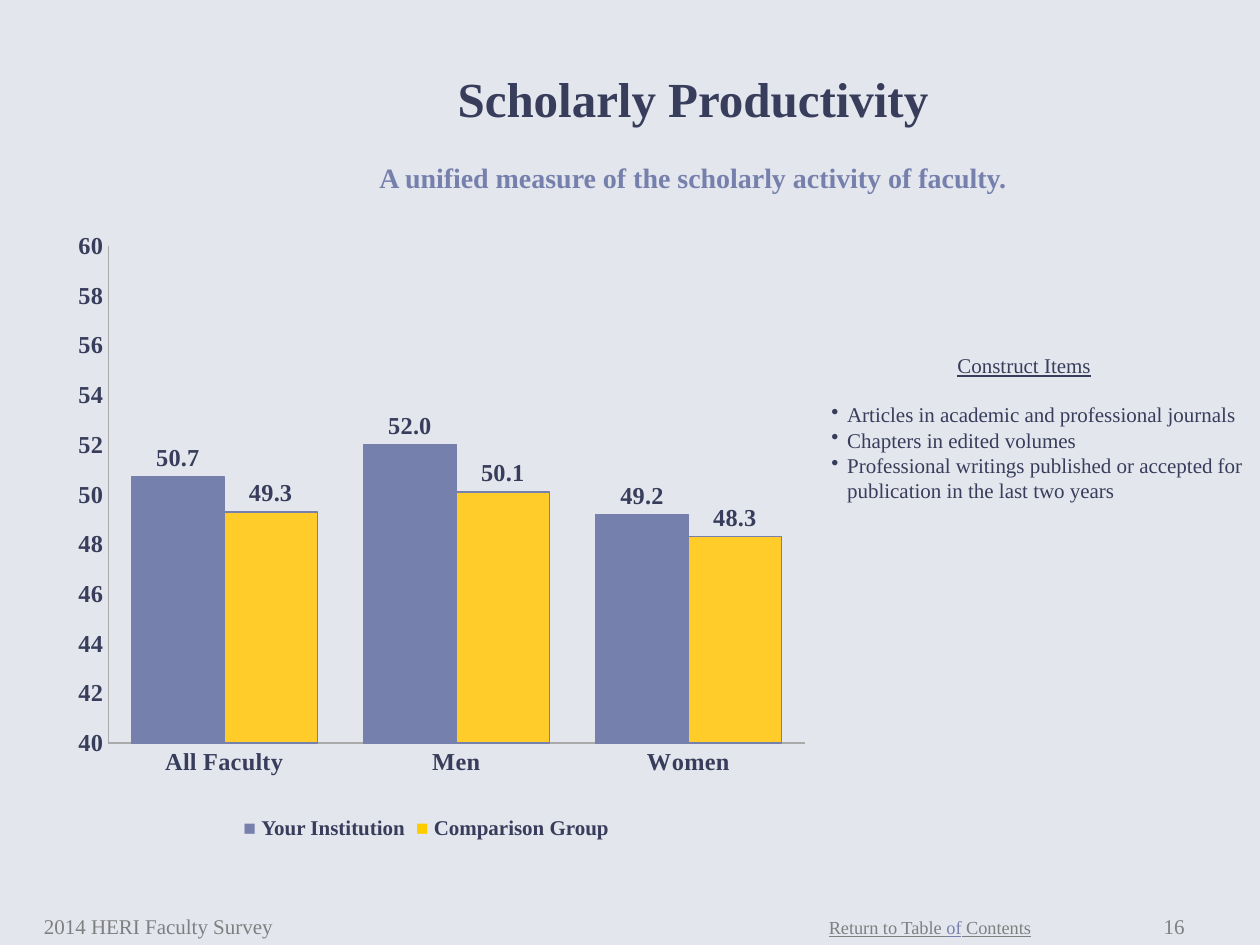
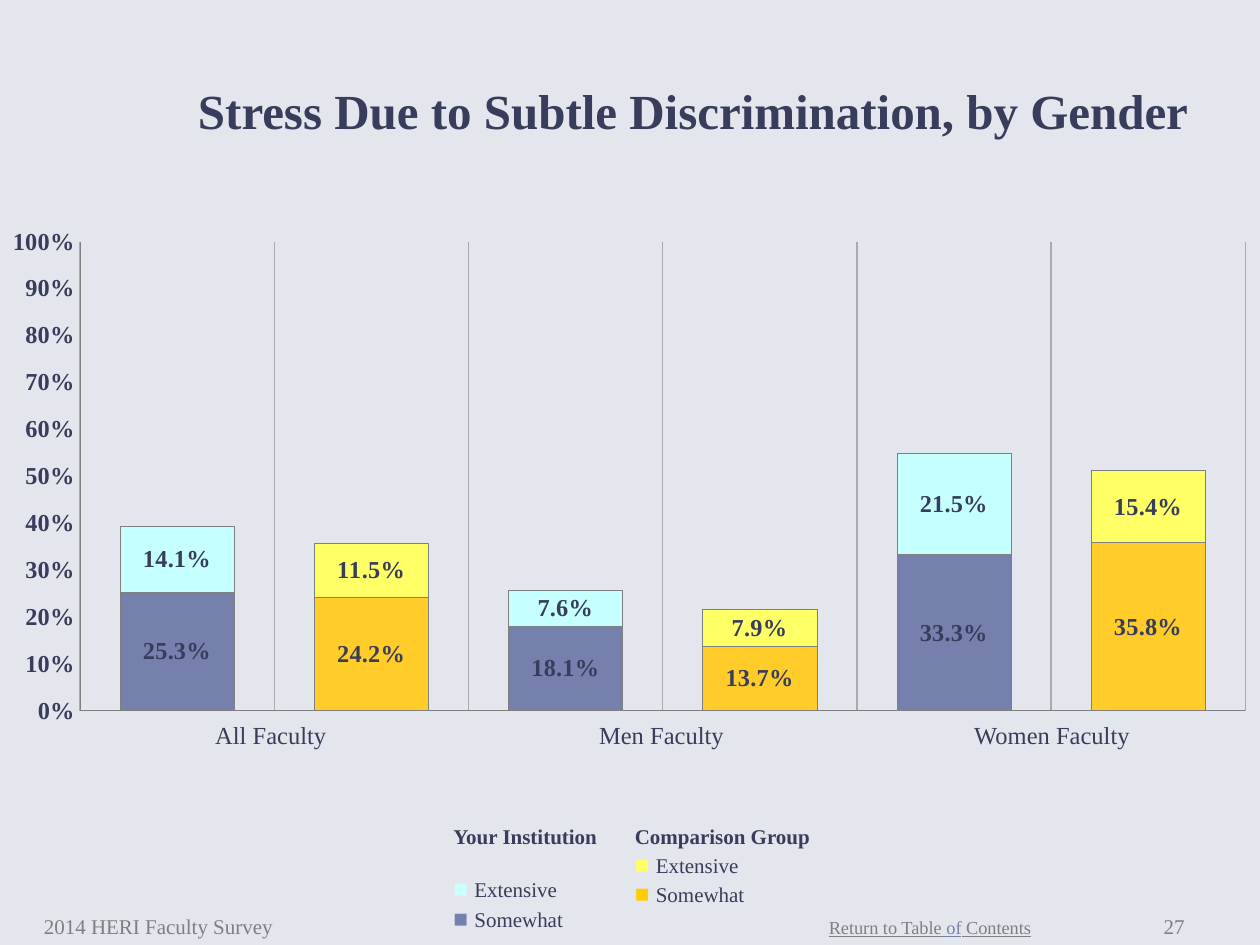
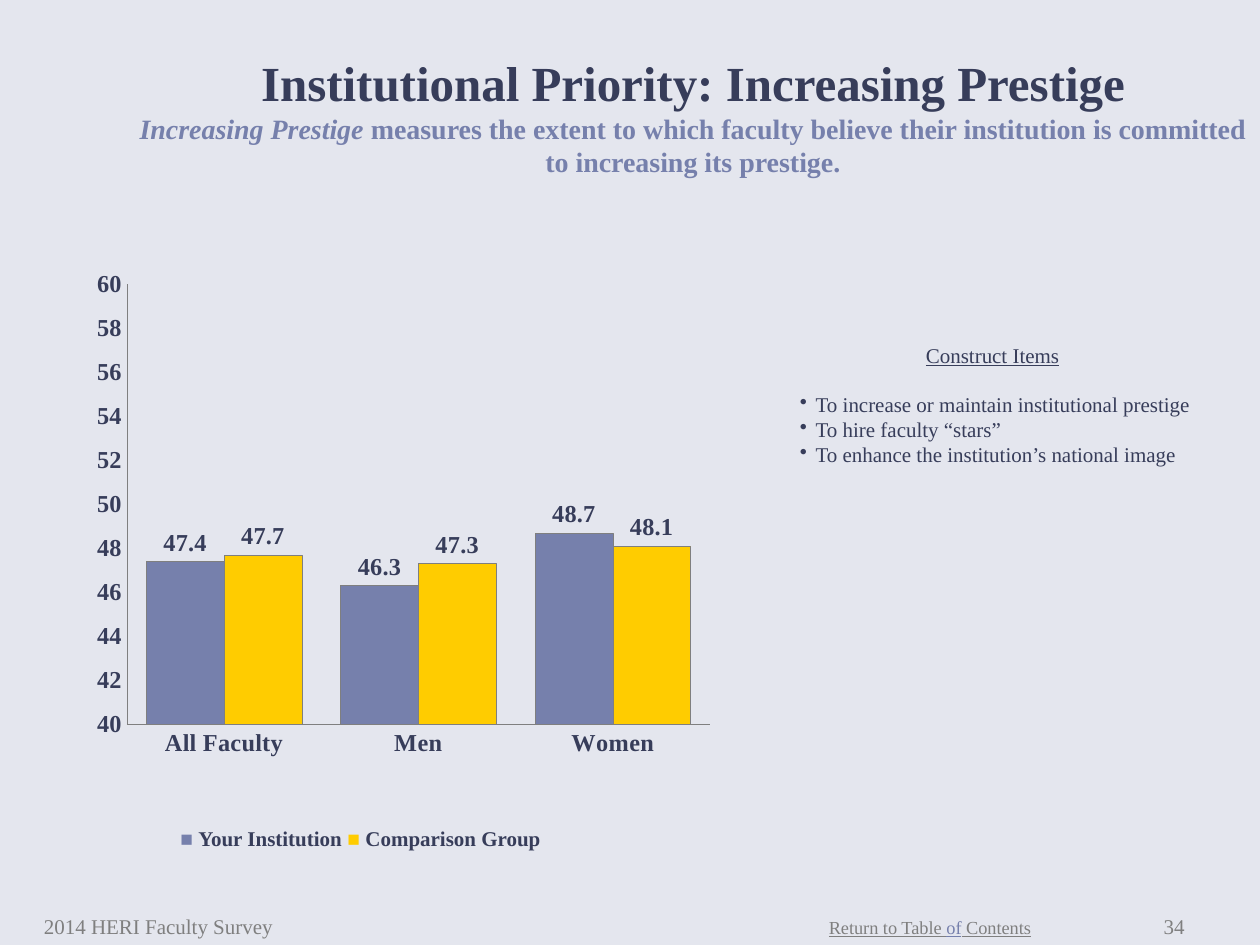
from lxml.etree import SubElement
from pptx import Presentation
from pptx.chart.data import CategoryChartData
from pptx.dml.color import RGBColor
from pptx.enum.chart import XL_CHART_TYPE as ChartType
from pptx.enum.chart import XL_LABEL_POSITION as LabelPosition
from pptx.enum.chart import XL_TICK_LABEL_POSITION as TickLabels
from pptx.enum.chart import XL_TICK_MARK as TickMark
from pptx.enum.text import MSO_ANCHOR as Anchor
from pptx.enum.text import PP_ALIGN as Align
from pptx.oxml.ns import qn
from pptx.util import Pt

BACKGROUND = RGBColor(0xE4, 0xE6, 0xEE)
NAVY = RGBColor(0x37, 0x3D, 0x5A)
BLUE = RGBColor(0x76, 0x80, 0xAC)
GRAY = RGBColor(0x7F, 0x7F, 0x7F)
LIGHT_GRAY = RGBColor(0xAA, 0xAA, 0xAA)
AMBER = RGBColor(0xFF, 0xCC, 0x29)
GOLD = RGBColor(0xFF, 0xCC, 0x00)
YELLOW = RGBColor(0xFF, 0xFF, 0x66)
AQUA = RGBColor(0xC5, 0xFF, 0xFE)
LEGEND_AQUA = RGBColor(0xCC, 0xFF, 0xFF)

FONT = "Times New Roman"
CHART_SIZE = 13.9
GROUPS = ["Your Institution", "Comparison Group"]
FACULTY = ["All Faculty", "Men", "Women"]


class Deck:
    """Holds the survey style and the slide being built."""

    def __init__(self):
        self.presentation = Presentation()
        self.presentation.slide_width = Pt(720)
        self.presentation.slide_height = Pt(540)
        fill = self.presentation.slide_master.background.fill
        fill.solid()
        fill.fore_color.rgb = BACKGROUND
        self.slide = None

    def new_slide(self, number):
        self.slide = self.presentation.slides.add_slide(self.presentation.slide_layouts[6])
        link = self.text_box(466.5, 520, 131, 20, wrap=False)
        self.paragraph(link, [("Return to Table ", {}), ("of", {"color": BLUE}), (" Contents", {})],
                       size=10.5, color=GRAY, underline=True)
        survey = self.text_box(18, 504, 228, 36, Anchor.BOTTOM)
        self.paragraph(survey, "2014 HERI Faculty Survey", color=GRAY)
        page = self.text_box(648, 504, 36, 36, Anchor.BOTTOM)
        self.paragraph(page, str(number), color=GRAY, align=Align.RIGHT)

    def text_box(self, left, top, width, height, anchor=Anchor.TOP, wrap=True):
        shape = self.slide.shapes.add_textbox(Pt(left), Pt(top), Pt(width), Pt(height))
        shape.text_frame.word_wrap = wrap
        shape.text_frame.vertical_anchor = anchor
        return shape.text_frame

    def style(self, font, color=None, size=None, **flags):
        if color is not None:
            font.color.rgb = color
        if size is not None:
            font.size = Pt(size)
        for flag, value in flags.items():
            setattr(font, flag, value)

    def paragraph(self, frame, content, size=12, color=NAVY, align=Align.LEFT, before=0,
                  margin=0, bullet=False, tab=None, **flags):
        paragraph = frame.paragraphs[0]
        if paragraph.runs:
            paragraph = frame.add_paragraph()
        properties = paragraph._p.get_or_add_pPr()
        if margin:
            properties.set("marL", str(Pt(margin)))
        if bullet:
            properties.set("indent", str(-Pt(margin)))
            SubElement(properties, qn("a:buChar"), char="•")
        if tab:
            tabs = SubElement(properties, qn("a:tabLst"))
            SubElement(tabs, qn("a:tab"), pos=str(Pt(tab)), algn="l")
        paragraph.alignment = align
        if before:
            paragraph.space_before = Pt(before)
        self.style(paragraph.font, color, size, name=FONT, **flags)
        runs = [(content, {})] if isinstance(content, str) else content
        for text, changes in runs:
            run = paragraph.add_run()
            run.text = text
            self.style(run.font, **changes)

    def title(self, text, top, height, subtitle=None, gap=0):
        frame = self.text_box(72, top, 648, height, Anchor.MIDDLE)
        self.paragraph(frame, text, size=28, align=Align.CENTER, bold=True)
        if subtitle:
            self.paragraph(frame, subtitle, size=16, color=BLUE, align=Align.CENTER,
                           before=gap, bold=True)

    def construct_items(self, left, top, width, height, items):
        frame = self.text_box(left, top, width, height)
        self.paragraph(frame, "Construct Items", margin=72, underline=True)
        for index, item in enumerate(items):
            self.paragraph(frame, item, margin=9, bullet=True, before=0 if index else 13.8)

    def group_legend(self, left, top, width, tab):
        frame = self.text_box(left, top, width, 22)
        self.paragraph(frame, [("■ ", {"color": BLUE}), (GROUPS[0] + "\t", {}),
                               ("■ ", {"color": GOLD}), (GROUPS[1], {})], tab=tab, bold=True)

    def level_legend(self, left, heading, extensive, somewhat, gap=0):
        frame = self.text_box(left, 467, 120, 71)
        self.paragraph(frame, heading, bold=True)
        for level, color, before in (("Extensive", extensive, gap), ("Somewhat", somewhat, 0)):
            self.paragraph(frame, [("■ ", {"color": color, "size": 14}), (level, {})], before=before)

    def chart(self, kind, box, plot_box, categories, series, scale, axis_format, label_format,
              gap, axis_line, outline):
        data = CategoryChartData()
        data.categories = categories
        for name, values, _ in series:
            data.add_series(name, values)
        chart = self.slide.shapes.add_chart(kind, *map(Pt, box), data).chart
        chart.has_legend = False
        chart.has_title = False
        self.style(chart.font, NAVY, CHART_SIZE, name=FONT, bold=True)
        self.place_plot(chart, plot_box)

        for axis in (chart.category_axis, chart.value_axis):
            axis.major_tick_mark = axis.minor_tick_mark = TickMark.NONE
            axis.has_major_gridlines = False
            self.line(axis.format.line, *axis_line)
        value_axis = chart.value_axis
        value_axis.minimum_scale, value_axis.maximum_scale, value_axis.major_unit = scale
        value_axis.tick_labels.number_format = axis_format
        value_axis.tick_labels.number_format_is_linked = False

        stacked = kind == ChartType.COLUMN_STACKED
        plot = chart.plots[0]
        plot.vary_by_categories = False
        plot.gap_width = gap
        plot.overlap = 100 if stacked else 0
        for column, (_, values, colors) in zip(plot.series, series):
            self.paint(column.format, colors[-1], outline)
            if len(colors) > 1:
                for index in range(len(values)):
                    self.paint(column.points[index].format, colors[index % len(colors)], outline)
            labels = column.data_labels
            labels.show_value = True
            labels.number_format = label_format
            labels.number_format_is_linked = False
            labels.position = LabelPosition.CENTER if stacked else LabelPosition.OUTSIDE_END
            self.style(labels.font, NAVY, CHART_SIZE, name=FONT, bold=True)
        return chart

    def place_plot(self, chart, plot_box):
        area = chart._chartSpace.chart.plotArea
        for layout in area.findall(qn("c:layout")):
            area.remove(layout)
        layout = SubElement(area, qn("c:layout"))
        area.insert(0, layout)
        manual = SubElement(layout, qn("c:manualLayout"))
        settings = [("layoutTarget", "inner"), ("xMode", "edge"), ("yMode", "edge")]
        for tag, value in settings + list(zip("xywh", plot_box)):
            SubElement(manual, qn(f"c:{tag}"), val=str(value))

    def line(self, line, color, width):
        line.color.rgb = color
        line.width = Pt(width)

    def paint(self, format, color, outline):
        format.fill.solid()
        format.fill.fore_color.rgb = color
        self.line(format.line, *outline)

    def score_chart(self, box, plot_box, scores, colors, axis_line, outline):
        series = [(name, values, [color]) for name, values, color in zip(GROUPS, scores, colors)]
        self.chart(ChartType.COLUMN_CLUSTERED, box, plot_box, FACULTY, series, (40, 60, 2),
                   "#,##0", "0.0", 50, axis_line, outline)


def scholarly_productivity(deck):
    deck.new_slide(16)
    deck.title("Scholarly Productivity", 18, 114,
               "A unified measure of the scholarly activity of faculty.", gap=19)
    deck.score_chart((36, 126, 432, 324), (0.06, 0.045, 0.921, 0.877),
                     [(50.7, 52.0, 49.2), (49.3, 50.1, 48.3)], (BLUE, AMBER),
                     (LIGHT_GRAY, 0.75), (BLUE, 0.75))
    deck.construct_items(468, 198, 252, 94, [
        "Articles in academic and professional journals",
        "Chapters in edited volumes",
        "Professional writings published or accepted for publication in the last two years",
    ])
    deck.group_legend(132, 462, 240, tab=98.5)


def subtle_discrimination(deck):
    deck.new_slide(27)
    deck.title("Stress Due to Subtle Discrimination, by Gender", 12, 102)
    series = [
        ("Somewhat", (0.253, 0.242, 0.181, 0.137, 0.333, 0.358), [BLUE, AMBER]),
        ("Extensive", (0.141, 0.115, 0.076, 0.079, 0.215, 0.154), [AQUA, YELLOW]),
    ]
    chart = deck.chart(ChartType.COLUMN_STACKED, (4, 126, 708, 288), (0.059, 0.042, 0.941, 0.933),
                       list("123456"), series, (0, 1, 0.1), "0%", "0.0%", 70,
                       (GRAY, 0.19), (GRAY, 0.25))
    chart.category_axis.tick_label_position = TickLabels.NONE
    chart.category_axis.has_major_gridlines = True
    deck.line(chart.category_axis.major_gridlines.format.line, LIGHT_GRAY, 0.75)

    column_width = 223.2
    for index, name in enumerate(["All Faculty", "Men Faculty", "Women Faculty"]):
        frame = deck.text_box(43.2 + index * column_width, 408, column_width, 25)
        deck.paragraph(frame, name, size=14, align=Align.CENTER)
    deck.level_legend(252, GROUPS[0], LEGEND_AQUA, BLUE, gap=14)
    deck.level_legend(355.7, GROUPS[1], YELLOW, GOLD)


def increasing_prestige(deck):
    deck.new_slide(34)
    deck.title("Institutional Priority: Increasing Prestige", 12, 108, [
        ("Increasing Prestige ", {"italic": True}),
        ("measures the extent to which faculty believe their institution is committed "
         "to increasing its prestige.", {}),
    ])
    deck.score_chart((0, 126, 468, 324), (0.155, 0.112, 0.712, 0.777),
                     [(47.4, 46.3, 48.7), (47.7, 47.3, 48.1)], (BLUE, GOLD),
                     (GRAY, 0.27), (GRAY, 0.25))
    deck.group_legend(96, 468, 252, tab=95.5)
    deck.construct_items(450, 192, 246, 246, [
        "To increase or maintain institutional prestige",
        "To hire faculty “stars”",
        "To enhance the institution’s national image",
    ])


def main():
    deck = Deck()
    scholarly_productivity(deck)
    subtle_discrimination(deck)
    increasing_prestige(deck)
    deck.presentation.save("out.pptx")


if __name__ == "__main__":
    main()
